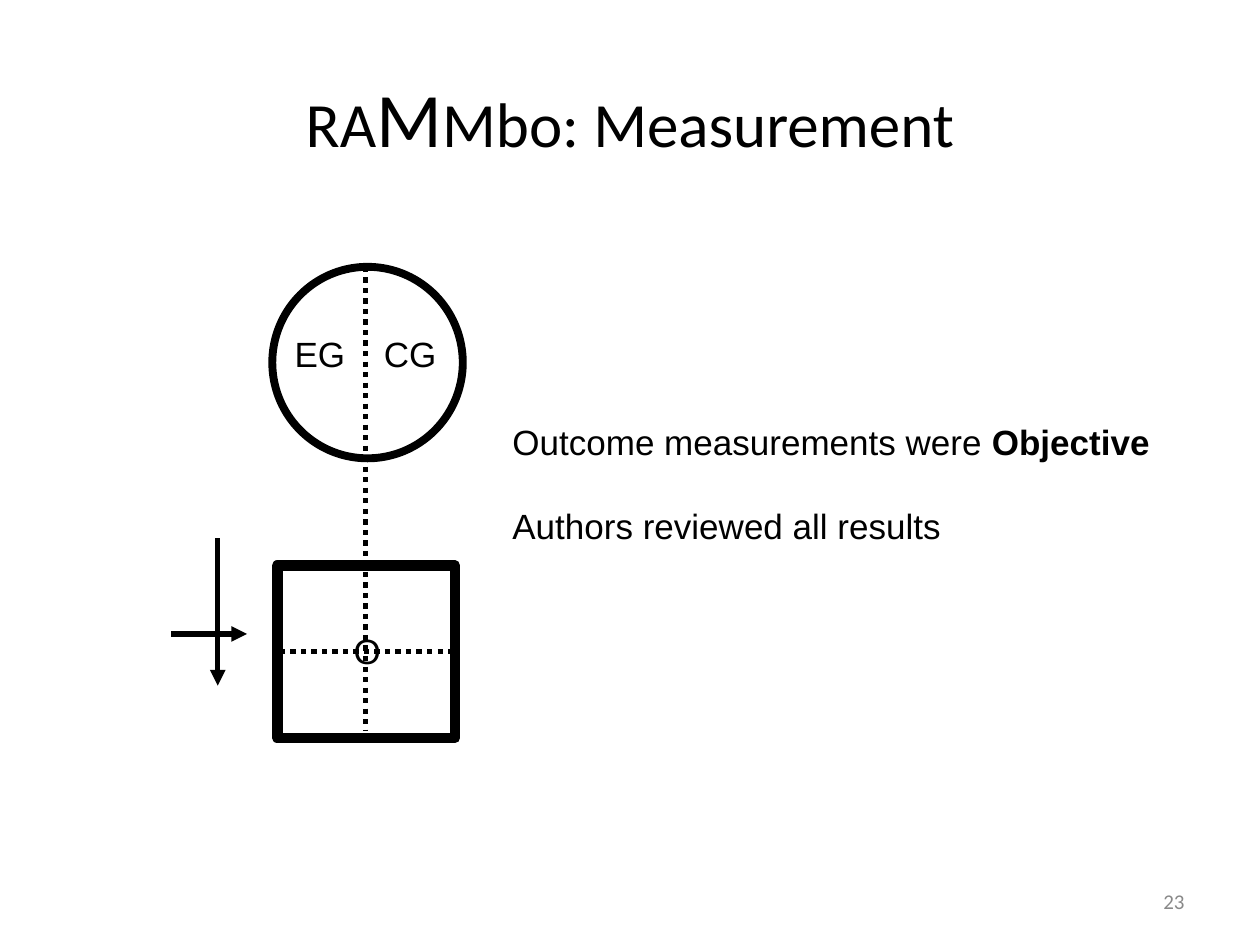
import pptx
import pptx.dml.color
import pptx.enum.dml
import pptx.enum.shapes
import pptx.enum.text
import pptx.oxml.ns
import pptx.util
from lxml import etree

Cm = pptx.util.Cm
Pt = pptx.util.Pt
ALIGN = pptx.enum.text.PP_ALIGN
ANCHOR = pptx.enum.text.MSO_ANCHOR
SHAPE = pptx.enum.shapes.MSO_SHAPE
COLORS = {"ink": "000000", "muted": "898989"}
TITLE = {"name": "Calibri", "size": Pt(36)}
BODY = {"name": "Arial", "size": Pt(20)}
NUMBER = {"name": "Calibri", "size": Pt(12)}
TIGHT = {"margin_left": Cm(0.2), "margin_right": Cm(0.2),
         "margin_top": Cm(0.1), "margin_bottom": Cm(0.1)}
MIDDLE = {"vertical_anchor": ANCHOR.MIDDLE}


def color(name):
    return pptx.dml.color.RGBColor.from_string(COLORS[name])


def add_element(parent, tag, **attributes):
    return etree.SubElement(parent, pptx.oxml.ns.qn(tag), attributes)


def set_all(target, values):
    for name, value in values.items():
        setattr(target, name, value)


class SlideBuilder:
    def __init__(self, slide):
        self.shapes = slide.shapes

    def text(self, at, paragraphs, font, frame_format, ink="ink",
             align=ALIGN.LEFT, gap=0, tab=None):
        """Each paragraph is a list of (text, font overrides) pairs."""
        frame = self.shapes.add_textbox(*map(Cm, at)).text_frame
        set_all(frame, {"word_wrap": True, **frame_format})
        for index, spans in enumerate(paragraphs):
            para = frame.add_paragraph() if index else frame.paragraphs[0]
            para.alignment = align
            if index:
                para.space_before = Pt(gap)
            if tab:
                stops = add_element(para._p.get_or_add_pPr(), "a:tabLst")
                add_element(stops, "a:tab", pos=str(Cm(tab)), algn="l")
            for words, overrides in spans:
                span = para.add_run()
                span.text = words
                set_all(span.font, {**font, **overrides})
                span.font.color.rgb = color(ink)

    def outline(self, kind, at, width):
        shape = self.shapes.add_shape(kind, *map(Cm, at))
        shape.shadow.inherit = False
        shape.fill.background()
        shape.line.color.rgb = color("ink")
        shape.line.width = Pt(width)

    def line(self, start, end, dotted=False, arrow=False):
        connector = self.shapes.add_connector(
            pptx.enum.shapes.MSO_CONNECTOR.STRAIGHT, *map(Cm, start + end))
        connector.line.color.rgb = color("ink")
        connector.line.width = Pt(3)
        if dotted:
            connector.line.dash_style = pptx.enum.dml.MSO_LINE.ROUND_DOT
        if arrow:
            add_element(connector.line._get_or_add_ln(), "a:tailEnd", type="triangle")
        add_element(connector._element.spPr, "a:effectLst")


def main():
    deck = pptx.Presentation()
    deck.slide_width, deck.slide_height = Cm(25.4), Cm(19.05)
    page = SlideBuilder(deck.slides.add_slide(deck.slide_layouts[6]))

    page.text((1.27, 0.76, 22.86, 3.18),
              [[("RA", {}), ("M", {"size": Pt(44)}), ("Mbo: Measurement", {})]],
              TITLE, MIDDLE, align=ALIGN.CENTER)
    page.text((18.21, 17.65, 5.92, 1.02), [[("23", {})]],
              NUMBER, MIDDLE, ink="muted", align=ALIGN.RIGHT)

    page.line((4.39, 10.85), (4.39, 13.82), arrow=True)
    page.line((7.37, 5.38), (7.37, 14.73), dotted=True)
    page.line((3.45, 12.78), (4.98, 12.78), arrow=True)

    page.text((5.74, 6.6, 3.28, 1.07), [[("EG\tCG", {})]], BODY, TIGHT, tab=1.8)
    page.outline(SHAPE.RECTANGLE, (5.59, 11.4, 3.58, 3.48), 6)
    page.line((5.64, 13.13), (9.12, 13.13), dotted=True)
    page.text((6.93, 12.6, 0.94, 1.07), [[("O", {})]], BODY,
              {**TIGHT, "word_wrap": False})
    page.text((10.13, 8.38, 13.34, 5.33),
              [[("Outcome measurements were ", {}), ("Objective", {"bold": True})],
               [("Authors reviewed all results", {})]],
              BODY, TIGHT, gap=24)
    page.outline(SHAPE.OVAL, (5.49, 5.38, 3.84, 3.86), 4.5)

    deck.save("out.pptx")


if __name__ == "__main__":
    main()
